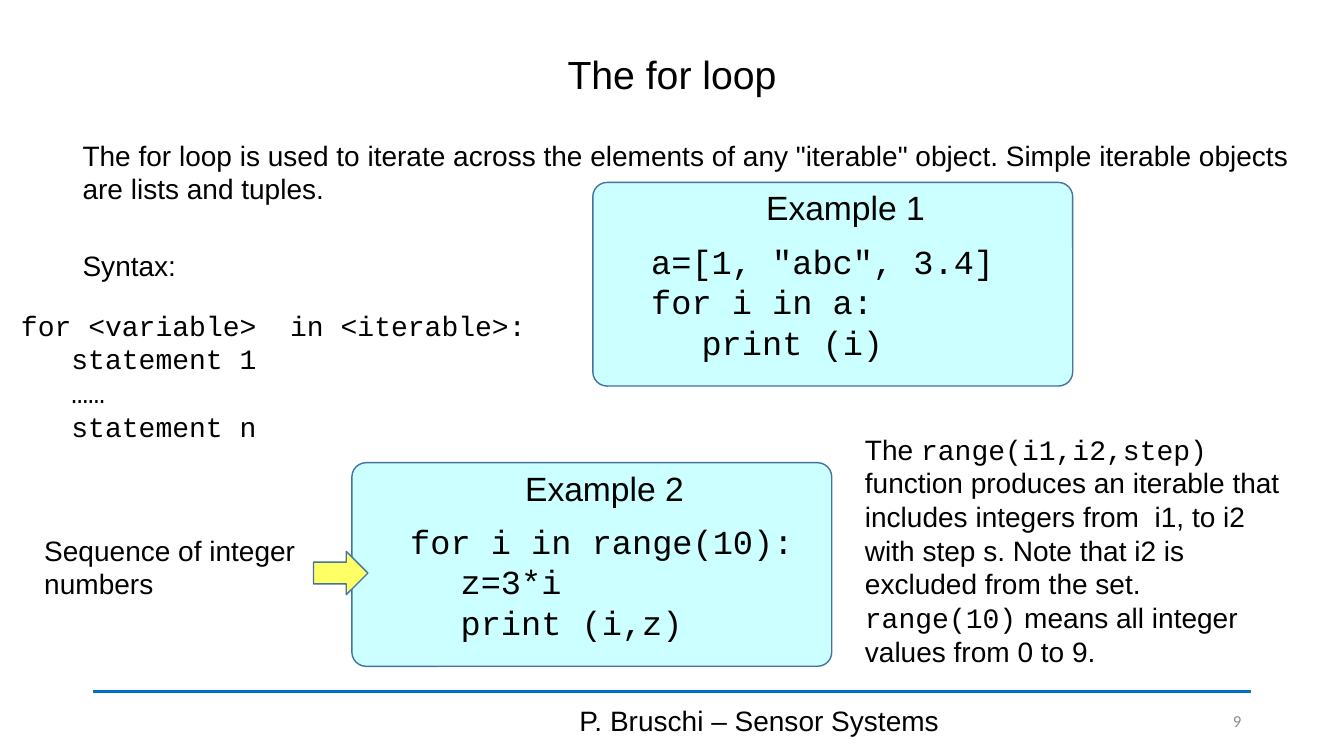
from lxml.etree import SubElement
from pptx import Presentation
from pptx.dml.color import RGBColor
from pptx.enum.shapes import MSO_CONNECTOR, MSO_SHAPE
from pptx.enum.text import MSO_ANCHOR as Anchor, PP_ALIGN as Align
from pptx.oxml.ns import qn
from pptx.util import Inches, Pt

BLACK = RGBColor(0x00, 0x00, 0x00)
GREY = RGBColor(0x8C, 0x8C, 0x8C)
BLUE = RGBColor(0x00, 0x70, 0xC0)
OUTLINE = RGBColor(0x43, 0x73, 0x9E)
CYAN = RGBColor(0xCC, 0xFF, 0xFF)
YELLOW = RGBColor(0xFF, 0xFF, 0x66)
SANS, MONO, NUMBER_FONT = "Arial", "Courier New", "Calibri"

# Content: a text is a list of paragraphs, a paragraph a list of (words, font)
TITLE = [[("The for loop", SANS)]]
INTRO = [[('The for loop is used to iterate across the elements of any "iterable" object. '
           "Simple iterable objects are lists and tuples.", SANS)]]
SYNTAX_LABEL = [[("Syntax:", SANS)]]
SYNTAX = [[(line, MONO)] for line in
          ("for <variable>  in <iterable>:", "\tstatement 1", "\t……", "\tstatement n")]
SEQUENCE = [[("Sequence of integer numbers", SANS)]]
RANGE_NOTE = [
    [("The ", SANS), ("range(i1,i2,step)", MONO),
     (" function produces an iterable that includes integers from  i1, to i2 with step s. "
      "Note that i2 is excluded from the set.", SANS)],
    [("range(10)", MONO), (" means all integer values from 0 to 9.", SANS)],
]
FOOTER = [[("P. Bruschi – Sensor Systems", SANS)]]
PAGE_NUMBER = [[("9", NUMBER_FONT)]]
EXAMPLES = [  # heading, code lines, left and top of the card
    ("Example 1", ('a=[1, "abc", 3.4]', "for i in a:", "\tprint (i)"), 5.88, 1.81),
    ("Example 2", ("for i in range(10):", "\tz=3*i", "\tprint (i,z)"), 3.49, 4.59),
]

# Layout grid, in inches
WIDTH, HEIGHT = 13.33, 7.5
MARGIN = 0.92
INNER = WIDTH - 2 * MARGIN
TEXT_LEFT, TEXT_RIGHT = 0.72, 12.97
NOTE_LEFT = 8.48
RULE_TOP, FOOTER_TOP, FOOTER_HEIGHT = 6.86, 6.95, 0.4
CARD_WIDTH, CARD_HEIGHT = 4.76, 2.02
HEADING_WIDTH, HEADING_HEIGHT, HEADING_SHIFT = 1.79, 0.5, 1.62
CODE_SHIFT, CODE_DROP, CODE_WIDTH, CODE_HEIGHT = 0.48, 0.53, 4.08, 1.31


def inches(*lengths):
    return [Inches(length) for length in lengths]


def write(frame, paragraphs, size, color=BLACK, align=Align.LEFT):
    for index, spans in enumerate(paragraphs):
        para = frame.paragraphs[0] if index == 0 else frame.add_paragraph()
        para.alignment = align
        for words, font in spans:
            span = para.add_run()
            span.text = words
            span.font.name = font
            span.font.size = Pt(size)
            span.font.color.rgb = color


def add_text(page, area, paragraphs, size=20, color=BLACK, align=Align.LEFT,
             anchor=Anchor.TOP, wrap=True):
    frame = page.shapes.add_textbox(*inches(*area)).text_frame
    frame.word_wrap = wrap
    frame.vertical_anchor = anchor
    write(frame, paragraphs, size, color, align)


def add_outlined(page, kind, area, fill):
    shape = page.shapes.add_shape(kind, *inches(*area))
    shape.shadow.inherit = False
    shape.fill.solid()
    shape.fill.fore_color.rgb = fill
    shape.line.color.rgb = OUTLINE
    shape.line.width = Pt(1)
    return shape


def add_example(page, heading, lines, left, top):
    card = add_outlined(page, MSO_SHAPE.ROUNDED_RECTANGLE,
                        (left, top, CARD_WIDTH, CARD_HEIGHT), CYAN)
    card.adjustments[0] = 0.07
    add_text(page, (left + CODE_SHIFT, top + CODE_DROP, CODE_WIDTH, CODE_HEIGHT),
             [[(line, MONO)] for line in lines], 24)
    add_text(page, (left + HEADING_SHIFT, top, HEADING_WIDTH, HEADING_HEIGHT),
             [[(heading, SANS)]], 24, wrap=False)


def add_footer(page):
    rule = page.shapes.add_connector(
        MSO_CONNECTOR.STRAIGHT, *inches(MARGIN, RULE_TOP, MARGIN + INNER, RULE_TOP))
    rule.line.color.rgb = BLUE
    rule.line.width = Pt(2.75)
    SubElement(rule._element.spPr, qn("a:effectLst"))
    add_text(page, (4.42, FOOTER_TOP, 6.22, FOOTER_HEIGHT), FOOTER,
             align=Align.CENTER, anchor=Anchor.MIDDLE)
    add_text(page, (11.45, FOOTER_TOP, 0.96, FOOTER_HEIGHT), PAGE_NUMBER, 12, GREY,
             Align.RIGHT, Anchor.MIDDLE)


def add_title(page):
    title = page.shapes.title
    title.left, title.top, title.width, title.height = inches(MARGIN, 0.4, INNER, 0.72)
    title.text_frame.vertical_anchor = Anchor.MIDDLE
    write(title.text_frame, TITLE, 28, align=Align.CENTER)
    title.text_frame.paragraphs[0].line_spacing = 0.9


def main():
    deck = Presentation()
    deck.slide_width, deck.slide_height = inches(WIDTH, HEIGHT)
    page = deck.slides.add_slide(deck.slide_layouts.get_by_name("Title Only"))
    add_title(page)
    add_footer(page)
    for example in EXAMPLES:
        add_example(page, *example)
    add_text(page, (TEXT_LEFT, 1.32, TEXT_RIGHT - TEXT_LEFT, 0.77), INTRO)
    add_text(page, (TEXT_LEFT, 2.42, 2.39, 0.44), SYNTAX_LABEL)
    add_text(page, (0.11, 3.01, 5.28, 1.45), SYNTAX)
    add_text(page, (NOTE_LEFT, 4.24, TEXT_RIGHT - NOTE_LEFT, 2.46), RANGE_NOTE)
    add_text(page, (0.34, 5.24, 3.31, 0.77), SEQUENCE)
    add_outlined(page, MSO_SHAPE.RIGHT_ARROW, (3.11, 5.47, 0.54, 0.43), YELLOW)
    deck.save("out.pptx")


if __name__ == "__main__":
    main()
